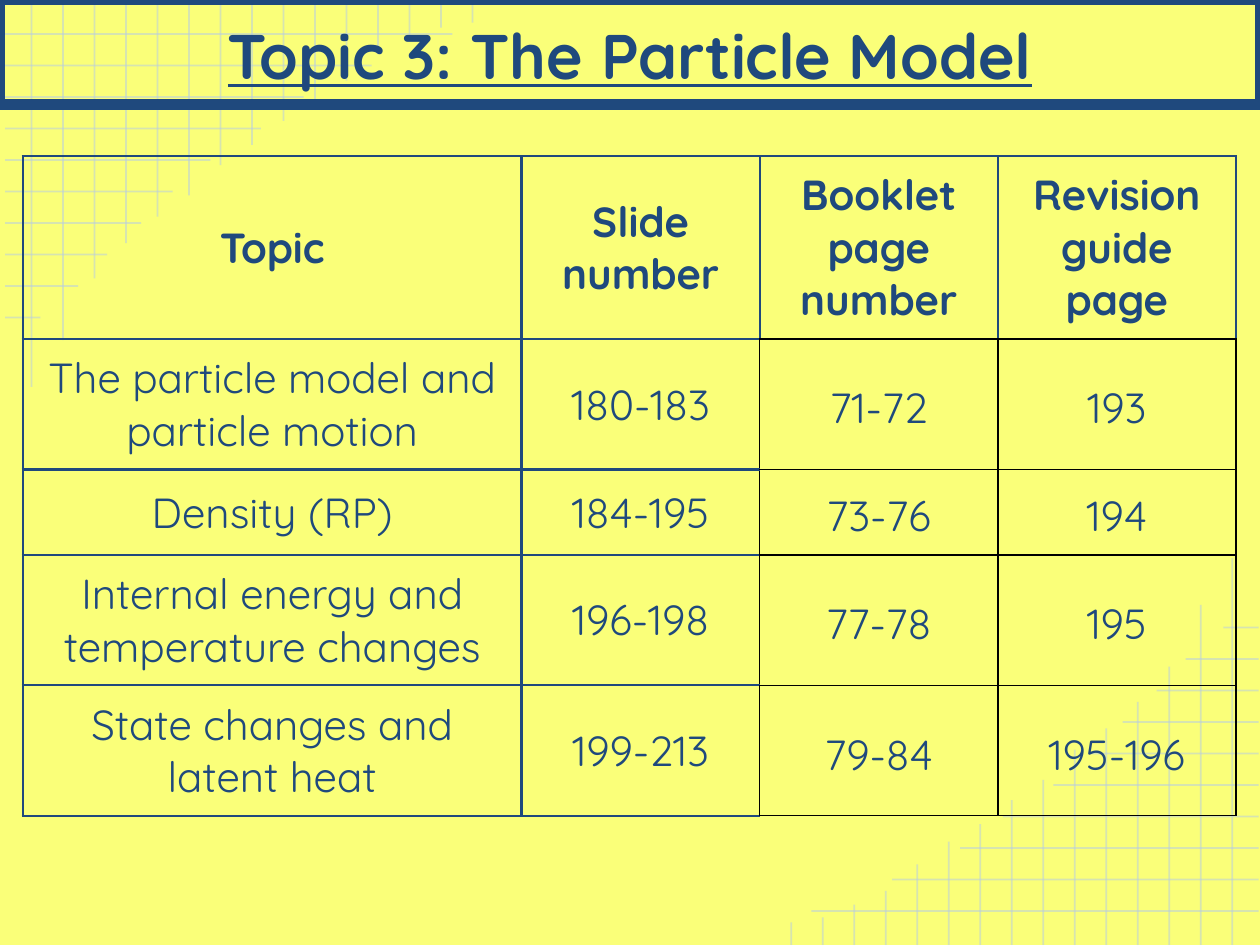
from lxml import etree
from pptx import Presentation
from pptx.dml.color import RGBColor
from pptx.enum import shapes, text
from pptx.oxml.ns import qn
from pptx.util import Inches, Pt

NAVY, BLACK, PALE_BLUE, YELLOW = "1F497D", "000000", "B7CCE4", "FAFF79"
FONT = "Quicksand"
GRID_STEP = 0.25
# How far each line of the corner grid runs, from the slide's corner inwards
ACROSS = [3.59, 2.95, 2.41, 2.07, 1.67, 1.37, 1.12, 0.85, 0.62, 0.32]
DOWN = [3.07, 2.7, 2.21, 1.93, 1.72, 1.55, 1.31, 1.15,
        0.96, 0.82, 0.64, 0.43, 0.32, 0.22, 0.18]
COLUMN_WIDTHS = [3.96, 1.89, 1.89, 1.89]
ROW_HEIGHTS = [0.69, 0.67, 0.67, 0.67, 0.7]
ROWS = [
    ["Topic", "Slide number", "Booklet page number", "Revision guide page"],
    ["The particle model and particle motion", "180-183", "71-72", "193"],
    ["Density (RP)", "184-195", "73-76", "194"],
    ["Internal energy and temperature changes", "196-198", "77-78", "195"],
    ["State changes and latent heat", "199-213", "79-84", "195-196"],
]


def rgb(color):
    return RGBColor.from_string(color)


def write(frame, words, size=24, bold=False, underline=False, spacing=1.0):
    para = frame.paragraphs[0]
    para.alignment = text.PP_ALIGN.CENTER
    para.line_spacing = spacing
    span = para.add_run()
    span.text = words
    font = span.font
    font.name, font.size = FONT, Pt(size)
    font.bold, font.underline = bold, underline
    font.color.rgb = rgb(NAVY)


def add_grid_line(group, start, end):
    line = group.shapes.add_connector(
        shapes.MSO_CONNECTOR.STRAIGHT, *map(Inches, start + end))
    line.line.width = Pt(1)
    line.line.color.rgb = rgb(PALE_BLUE)
    properties = line.element.spPr
    color = properties.find(".//" + qn("a:srgbClr"))
    etree.SubElement(color, qn("a:alpha"), val="53000")
    etree.SubElement(properties, qn("a:effectLst"))


def add_corner_grid(page, place):
    """Draw the fading grid; place maps top-left points to the wanted corner."""
    group = page.shapes.add_group_shape()
    for index, reach in enumerate(ACROSS):
        y = 0.27 + index * GRID_STEP
        add_grid_line(group, place(0.04, y), place(reach, y))
    for index, reach in enumerate(DOWN):
        x = 0.25 + index * GRID_STEP
        add_grid_line(group, place(x, reach), place(x, 0))


def format_title(page, words):
    title = page.shapes.title
    title.left, title.top = Inches(0), Inches(0)
    title.width, title.height = Inches(10), Inches(0.83)
    title.line.color.rgb = rgb(NAVY)
    title.line.width = Pt(6)
    frame = title.text_frame
    frame.auto_size = text.MSO_AUTO_SIZE.NONE
    frame.vertical_anchor = text.MSO_ANCHOR.BOTTOM
    frame.margin_left = frame.margin_right = Inches(0.1)
    frame.margin_top = frame.margin_bottom = Inches(0.1)
    write(frame, words, size=36, bold=True, underline=True)
    # Bring the title in front of the grids
    title.element.getparent().append(title.element)


def set_borders(cell, **sides):
    """Set the L, R, T and B borders, each given as (colour, points)."""
    properties = cell._tc.get_or_add_tcPr()
    for index, side in enumerate("LRTB"):
        color, points = sides[side]
        border = etree.Element(qn("a:ln" + side), w=str(Pt(points)))
        fill = etree.SubElement(border, qn("a:solidFill"))
        etree.SubElement(fill, qn("a:srgbClr"), val=color)
        properties.insert(index, border)


def format_cell(cell, words, row, column):
    header, page_column = row == 0, column >= 2
    plain_body = page_column and not header
    cell.fill.background()
    cell.vertical_anchor = text.MSO_ANCHOR.MIDDLE
    cell.margin_left = cell.margin_right = Inches(0.07 if plain_body else 0.1)
    cell.margin_top = cell.margin_bottom = Inches(0.1)
    write(cell.text_frame, words, bold=header,
          spacing=1.15 if plain_body else 1.0)

    # Navy around the header and topics, black around the page numbers
    navy, black = (NAVY, 1.5), (BLACK, 1)
    main = black if plain_body else navy
    set_borders(cell, L=main, T=main,
                R=black if column >= 1 and not header else navy,
                B=black if page_column else navy)


def add_contents_table(page):
    holder = page.shapes.add_table(
        len(ROWS), len(COLUMN_WIDTHS),
        Inches(0.18), Inches(1.24), Inches(9.64), Inches(5.07))
    table = holder.table
    table.first_row = table.horz_banding = False
    for column, width in zip(table.columns, COLUMN_WIDTHS):
        column.width = Inches(width)
    for row, height in zip(table.rows, ROW_HEIGHTS):
        row.height = Inches(height)
    holder.height = Inches(5.07)
    for row, entries in enumerate(ROWS):
        for column, words in enumerate(entries):
            format_cell(table.cell(row, column), words, row, column)


def main():
    deck = Presentation()
    deck.slide_width, deck.slide_height = Inches(10), Inches(7.5)
    page = deck.slides.add_slide(deck.slide_layouts[5])
    page.background.fill.solid()
    page.background.fill.fore_color.rgb = rgb(YELLOW)

    # The lower right grid is the upper left one turned by half a circle
    add_corner_grid(page, lambda x, y: (x, y))
    add_corner_grid(page, lambda x, y: (10.03 - x, 7.5 - y))
    format_title(page, "Topic 3: The Particle Model")
    add_contents_table(page)
    deck.save("out.pptx")


if __name__ == "__main__":
    main()
